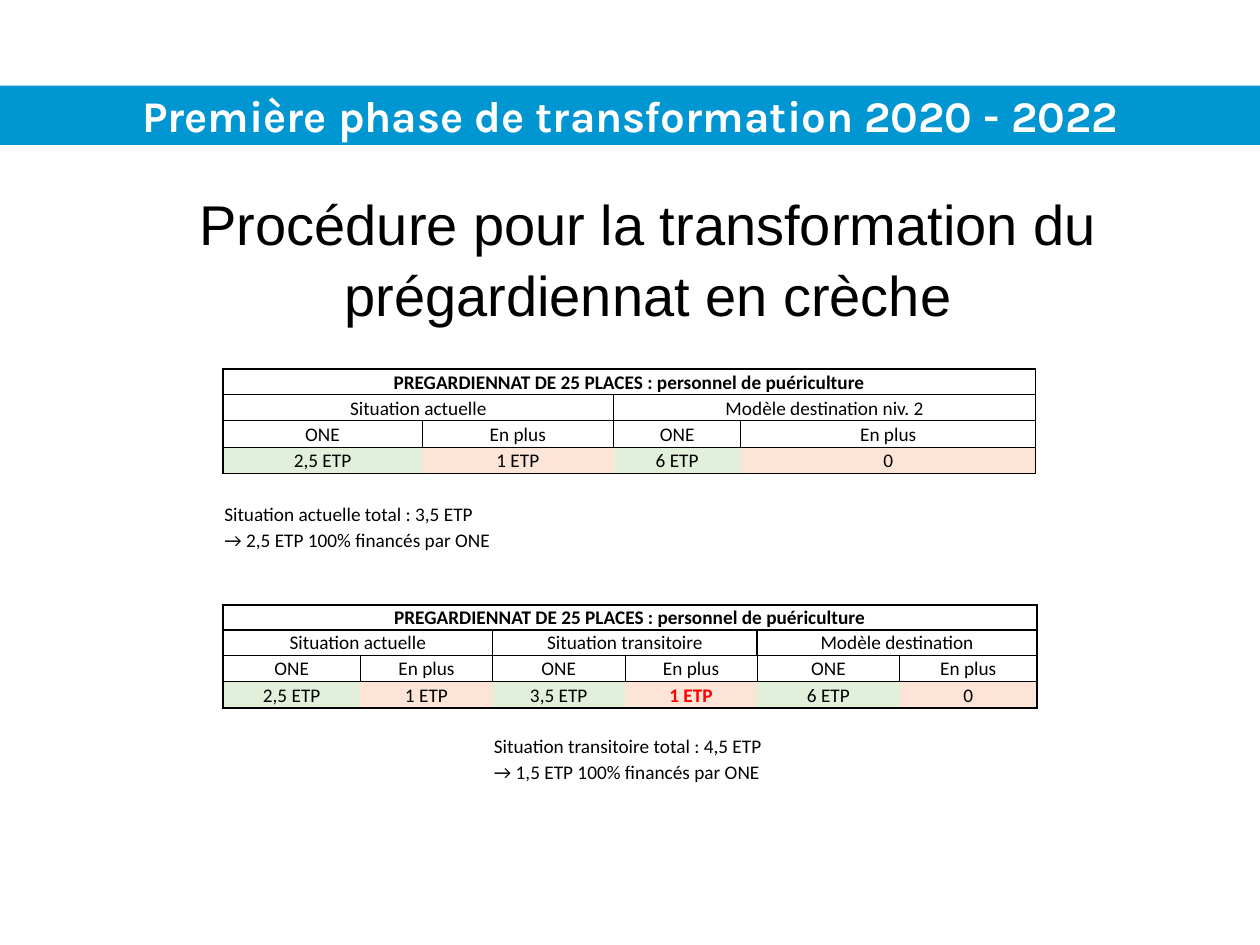
from dataclasses import dataclass

from lxml import etree
from pptx import Presentation
from pptx.dml.color import RGBColor
from pptx.enum.shapes import MSO_SHAPE
from pptx.enum.text import MSO_ANCHOR, PP_ALIGN
from pptx.oxml.ns import qn
from pptx.util import Inches, Pt

CENTER, LEFT = PP_ALIGN.CENTER, PP_ALIGN.LEFT
MIDDLE, BOTTOM = MSO_ANCHOR.MIDDLE, MSO_ANCHOR.BOTTOM
RECTANGLE = MSO_SHAPE.RECTANGLE


@dataclass(frozen=True)
class Theme:
    blue: str = "0096D2"
    white: str = "FFFFFF"
    black: str = "000000"
    red: str = "FF0000"
    green_fill: str = "E2EFDA"
    orange_fill: str = "FCE4D6"
    banner_size: int = 25
    heading_size: int = 32
    table_size: int = 11
    thick: float = 1
    thin: float = 0.5


theme = Theme()


def write(frame, text, font="Calibri", size=theme.table_size, color=theme.black,
          bold=False, align=CENTER):
    frame.word_wrap = True
    para = frame.paragraphs[0]
    para.alignment = align
    span = para.add_run()
    span.text = text
    span.font.name = font
    span.font.size = Pt(size)
    span.font.bold = bold
    span.font.color.rgb = RGBColor.from_string(color)
    return para


def set_borders(cell, left, right, top, bottom):
    properties = cell._tc.get_or_add_tcPr()
    for side, width in zip("LRTB", (left, right, top, bottom)):
        line = etree.SubElement(properties, qn(f"a:ln{side}"), w=str(Pt(width)))
        if width:
            fill = etree.SubElement(line, qn("a:solidFill"))
            etree.SubElement(fill, qn("a:srgbClr"), val=theme.black)
        else:
            etree.SubElement(line, qn("a:noFill"))


deck = Presentation()
deck.slide_width, deck.slide_height = Inches(10), Inches(7.5)
page = deck.slides.add_slide(deck.slide_layouts[6])

banner = page.shapes.add_shape(RECTANGLE, 0, Inches(0.68), Inches(10), Inches(0.47))
banner.shadow.inherit = False
banner.fill.solid()
banner.fill.fore_color.rgb = RGBColor.from_string(theme.blue)
banner.line.fill.background()
banner.text_frame.vertical_anchor = MIDDLE
write(banner.text_frame, "Première phase de transformation 2020 - 2022", font="Karla",
      size=theme.banner_size, color=theme.white, bold=True)

heading = page.shapes.add_textbox(Inches(0.5), Inches(1.41), Inches(9.29), Inches(5.29))
heading.text_frame.margin_top = Inches(0.07)
para = write(heading.text_frame, "Procédure pour la transformation du prégardiennat en crèche",
             font="Arial", size=theme.heading_size)
para.line_spacing = 1.05

staff_tables = [
    {
        "top": 4.8,
        "columns": [1.09, 1.05, 1.05, 1.05, 1.13, 1.09],
        "rows": [0.2, 0.2, 0.21, 0.21, 0.2, 0.2, 0.21],
        "stages": ["Situation actuelle", "Situation transitoire", "Modèle destination"],
        "values": ["2,5 ETP", "1 ETP", "3,5 ETP", "1 ETP", "6 ETP", "0"],
        "red_column": 3,
        "note_column": 2,
        "notes": ["Situation transitoire total : 4,5 ETP", "→ 1,5 ETP 100% financés par ONE"],
    },
    {
        "top": 2.93,
        "columns": [1.58, 1.52, 1.01, 2.34],
        "rows": [0.2, 0.21, 0.21, 0.21, 0.21, 0.21, 0.21],
        "stages": ["Situation actuelle", "Modèle destination niv. 2"],
        "values": ["2,5 ETP", "1 ETP", "6 ETP", "0"],
        "red_column": None,
        "note_column": 0,
        "notes": ["Situation actuelle total : 3,5 ETP", "→ 2,5 ETP 100% financés par ONE"],
    },
]

for staff in staff_tables:
    count = len(staff["columns"])
    last = count - 1
    frame = page.shapes.add_table(len(staff["rows"]), count, Inches(1.77), Inches(staff["top"]),
                                  Inches(sum(staff["columns"])), Inches(sum(staff["rows"])))
    table = frame.table
    table.first_row = table.horz_banding = False
    for column, width in zip(table.columns, staff["columns"]):
        column.width = Inches(width)
    for row, height in zip(table.rows, staff["rows"]):
        row.height = Inches(height)

    texts = {(0, 0): "PREGARDIENNAT DE 25 PLACES : personnel de puériculture"}
    table.cell(0, 0).merge(table.cell(0, last))
    for index, stage in enumerate(staff["stages"]):
        texts[1, 2 * index] = stage
        table.cell(1, 2 * index).merge(table.cell(1, 2 * index + 1))
    for index, value in enumerate(staff["values"]):
        texts[2, index] = ("ONE", "En plus")[index % 2]
        texts[3, index] = value
    for row, note in enumerate(staff["notes"], start=5):
        first = staff["note_column"]
        texts[row, first] = note
        table.cell(row, first).merge(table.cell(row, first + 2))

    for row in range(len(staff["rows"])):
        for column in range(count):
            cell = table.cell(row, column)
            cell.margin_left = cell.margin_right = cell.margin_top = Inches(0.01)
            cell.margin_bottom = 0
            cell.vertical_anchor = BOTTOM if row in (1, 5, 6) else MIDDLE

            inner = (theme.thick, theme.thick, theme.thin, 0, 0, 0, 0)[row]
            outer = theme.thick if row < 4 else 0
            top = (theme.thick, theme.thick, theme.thin, theme.thin, theme.thick, 0, 0)[row]
            bottom = (theme.thick, theme.thin, theme.thin, theme.thick, 0, 0, 0)[row]
            set_borders(cell, outer if column == 0 else inner,
                        outer if column == last else inner, top, bottom)

            if row == 3:
                cell.fill.solid()
                tint = (theme.green_fill, theme.orange_fill)[column % 2]
                cell.fill.fore_color.rgb = RGBColor.from_string(tint)
            else:
                cell.fill.background()

            if (row, column) in texts:
                red = row == 3 and column == staff["red_column"]
                write(cell.text_frame, texts[row, column], bold=row == 0 or red,
                      color=theme.red if red else theme.black,
                      align=LEFT if row > 4 else CENTER)
            else:
                ending = cell.text_frame.paragraphs[0]._p.get_or_add_endParaRPr()
                ending.set("sz", str(theme.table_size * 100))

deck.save("out.pptx")
